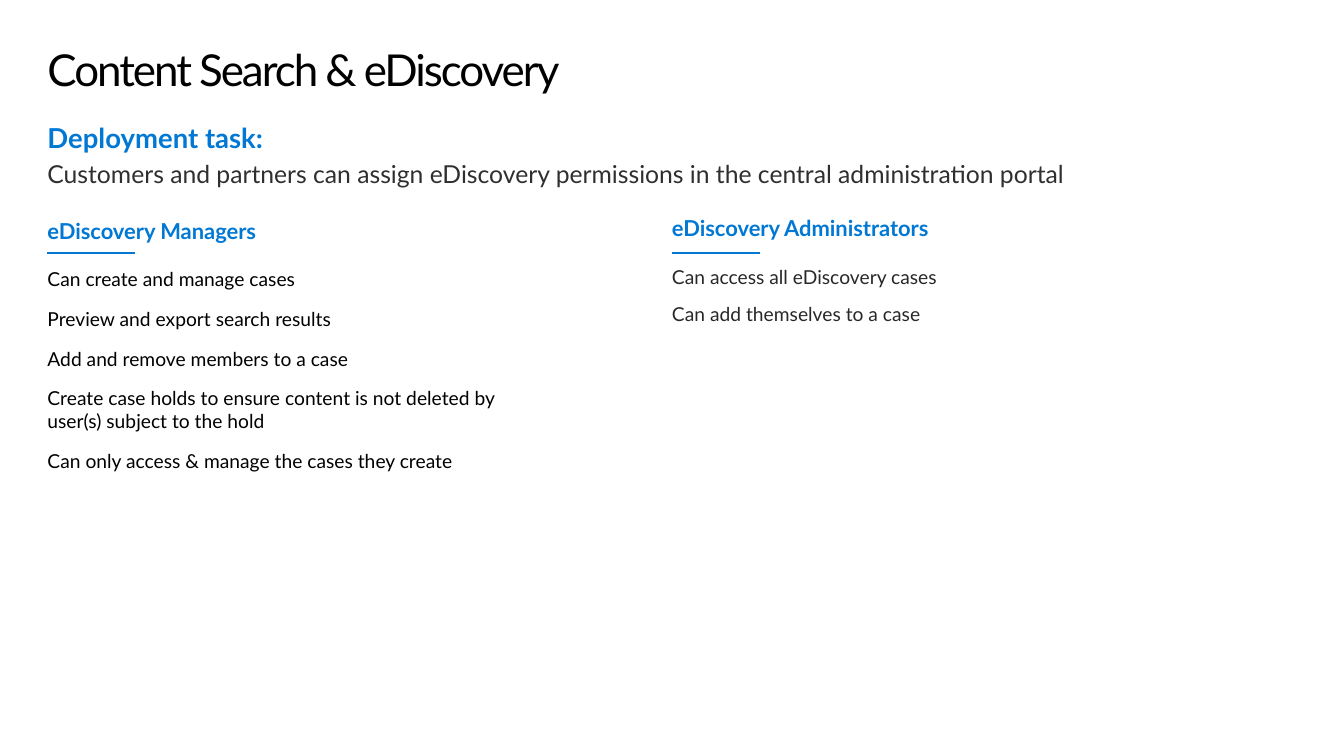
from dataclasses import dataclass

from lxml.etree import SubElement
from pptx import Presentation
from pptx.dml.color import RGBColor
from pptx.enum.shapes import MSO_CONNECTOR
from pptx.enum.text import MSO_ANCHOR
from pptx.oxml.ns import qn
from pptx.slide import Slide
from pptx.util import Inches, Pt


@dataclass(frozen=True)
class Theme:
    font: str = "Lato"
    black: str = "000000"
    accent: str = "0078D4"
    dark: str = "2F2F2F"
    charcoal: str = "282828"
    title_size: int = 32
    task_size: int = 20
    summary_size: int = 18
    heading_size: int = 16
    item_size: int = 14
    rule_width: float = 1.5


@dataclass(frozen=True)
class Line:
    text: str
    size: int
    color: str
    bold: bool = False
    leading: float = 1.0
    before: int = 0
    after: int = 0
    tracking: float = 0


@dataclass(frozen=True)
class Box:
    left: float
    top: float
    width: float
    height: float
    inset: float = 0


@dataclass(frozen=True)
class Role:
    name: str
    left: float
    width: float
    leading: float
    color: str
    duties: tuple[str, ...]


THEME = Theme()
MARGIN = 0.48
RULE_TOP = 2.56
RULE_LENGTH = 0.89

ROLES = (
    Role("eDiscovery Managers", MARGIN, 4.55, 1.0, THEME.black, (
        "Can create and manage cases",
        "Preview and export search results",
        "Add and remove members to a case",
        "Create case holds to ensure content is not deleted by user(s) subject to the hold",
        "Can only access & manage the cases they create",
    )),
    Role("eDiscovery Administrators", 6.8, 6.17, 0.9, THEME.charcoal, (
        "Can access all eDiscovery cases",
        "Can add themselves to a case",
    )),
)


def add_text(slide: Slide, box: Box, lines: list[Line]) -> None:
    """Write one paragraph per line into a top-anchored text box."""
    frame = slide.shapes.add_textbox(
        Inches(box.left), Inches(box.top), Inches(box.width), Inches(box.height)
    ).text_frame
    frame.word_wrap = True
    frame.vertical_anchor = MSO_ANCHOR.TOP
    frame.margin_left = frame.margin_right = 0
    frame.margin_top = frame.margin_bottom = Inches(box.inset)
    frame.text = "\n".join(line.text for line in lines)
    for paragraph, line in zip(frame.paragraphs, lines):
        paragraph.line_spacing = line.leading
        paragraph.space_before = Pt(line.before)
        paragraph.space_after = Pt(line.after)
        for run in paragraph.runs:
            run.font.name = THEME.font
            run.font.size = Pt(line.size)
            run.font.bold = line.bold
            run.font.color.rgb = RGBColor.from_string(line.color)
            if line.tracking:
                run._r.get_or_add_rPr().set("spc", str(round(line.tracking * 100)))


def add_rule(slide: Slide, left: float) -> None:
    """Draw the short accent rule under a role heading."""
    rule = slide.shapes.add_connector(
        MSO_CONNECTOR.STRAIGHT,
        Inches(left), Inches(RULE_TOP), Inches(left + RULE_LENGTH), Inches(RULE_TOP),
    )
    rule.line.color.rgb = RGBColor.from_string(THEME.accent)
    rule.line.width = Pt(THEME.rule_width)
    SubElement(rule._element.spPr, qn("a:effectLst"))


def add_role(slide: Slide, role: Role) -> None:
    """Draw a role heading, its rule and its duties."""
    add_text(slide, Box(role.left, 2.15, 2.8, 0.37, 0.05), [
        Line(role.name, THEME.heading_size, THEME.accent, True, role.leading, after=6),
    ])
    add_rule(slide, role.left)
    add_text(slide, Box(role.left, 2.71, role.width, 0.4 * len(role.duties)), [
        Line(duty, THEME.item_size, role.color, leading=role.leading, after=12)
        for duty in role.duties
    ])


def main() -> None:
    """Build and save the slide."""
    presentation = Presentation()
    presentation.slide_width = Inches(13.6)
    presentation.slide_height = Inches(7.65)
    slide = presentation.slides.add_slide(presentation.slide_layouts[6])
    add_text(slide, Box(MARGIN, 0.49, 12.65, 0.83), [
        Line("Content Search & eDiscovery", THEME.title_size, THEME.black,
             leading=0.9, tracking=-1.5),
    ])
    add_text(slide, Box(MARGIN, 1.26, 12.29, 0.66), [
        Line("Deployment task:", THEME.task_size, THEME.accent, True, 0.9),
        Line("Customers and partners can assign eDiscovery permissions in the "
             "central administration portal",
             THEME.summary_size, THEME.dark, leading=0.9, before=6, after=6),
    ])
    for role in ROLES:
        add_role(slide, role)
    presentation.save("out.pptx")


if __name__ == "__main__":
    main()
